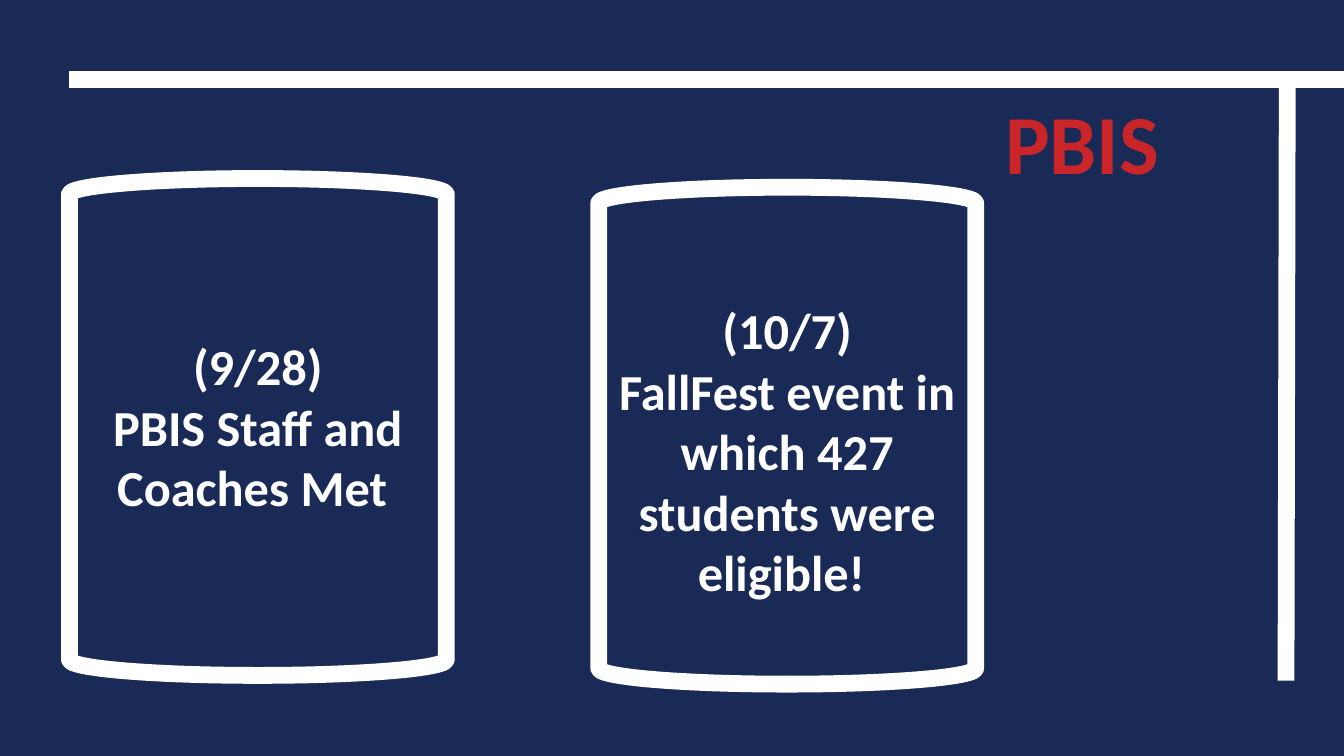
import pptx
import pptx.util
import pptx.dml.color
import pptx.enum.shapes
import pptx.enum.text
import pptx.oxml.ns
from dataclasses import dataclass
from lxml import etree

Cm = pptx.util.Cm
Pt = pptx.util.Pt


@dataclass(frozen=True)
class Theme:
    navy: str = "1A2A57"
    white: str = "FFFFFF"
    red: str = "CA2528"
    font: str = "Calibri"
    head: int = 60
    body: int = 36
    rule: int = 12


THEME = Theme()
WIDE, HIGH = 33.87, 19.05
CARD_W, CARD_H = 9.5, 12.52

# Left and top of each card, then top and height of its text
CARDS = [
    (1.75, 4.5, 8.33, 4.88, "(9/28)\nPBIS Staff and Coaches Met "),
    (15.09, 4.72, 7.42, 7.95,
     "(10/7)\nFallFest event in which 427 students were eligible! "),
]


def tint(code):
    return pptx.dml.color.RGBColor.from_string(code)


def place(shape, left, top, width, height):
    shape.left, shape.top = Cm(left), Cm(top)
    shape.width, shape.height = Cm(width), Cm(height)


def write(frame, text, size=THEME.body, color=THEME.white, bold=True):
    frame.word_wrap = True
    frame.auto_size = pptx.enum.text.MSO_AUTO_SIZE.NONE
    frame.vertical_anchor = pptx.enum.text.MSO_ANCHOR.TOP
    frame.text = text
    for para in frame.paragraphs:
        para.alignment = pptx.enum.text.PP_ALIGN.CENTER
        font = para.runs[0].font
        font.name, font.size, font.bold = THEME.font, Pt(size), bold
        font.color.rgb = tint(color)


def stroke(line):
    line.color.rgb = tint(THEME.white)
    line.width = Pt(THEME.rule)


def rule(slide, x1, y1, x2, y2):
    line = slide.shapes.add_connector(
        pptx.enum.shapes.MSO_CONNECTOR.STRAIGHT,
        Cm(x1), Cm(y1), Cm(x2), Cm(y2))
    stroke(line.line)
    etree.SubElement(line._element.spPr, pptx.oxml.ns.qn("a:effectLst"))


def bracket(slide, left, top, flip):
    shape = slide.shapes.add_shape(
        pptx.enum.shapes.MSO_SHAPE.LEFT_BRACKET,
        Cm(left), Cm(top), Cm(CARD_W / 2), Cm(CARD_H))
    shape.shadow.inherit = False
    shape.fill.background()
    stroke(shape.line)
    if flip:
        shape._element.spPr.xfrm.set("flipH", "1")


def card(slide, left, top, text_top, text_h, text):
    # Two mirrored brackets make the frame
    for side in range(2):
        bracket(slide, left + side * CARD_W / 2, top, flip=side == 1)
    box = slide.shapes.add_textbox(
        Cm(left), Cm(text_top), Cm(CARD_W), Cm(text_h))
    write(box.text_frame, text)


def main():
    deck = pptx.Presentation()
    deck.slide_width, deck.slide_height = Cm(WIDE), Cm(HIGH)
    slide = deck.slides.add_slide(deck.slide_layouts[5])
    slide.background.fill.solid()
    slide.background.fill.fore_color.rgb = tint(THEME.navy)

    # Title
    title = slide.shapes.title
    place(title, 22.43, 2.16, 9.68, 2.82)
    write(title.text_frame, "PBIS", size=THEME.head, color=THEME.red)

    # Rules along the top and right
    rule(slide, WIDE, 2, 1.75, 2)
    rule(slide, 32.44, 2, 32.41, 17.15)

    # Event cards
    for item in CARDS:
        card(slide, *item)

    deck.save("out.pptx")


if __name__ == "__main__":
    main()
